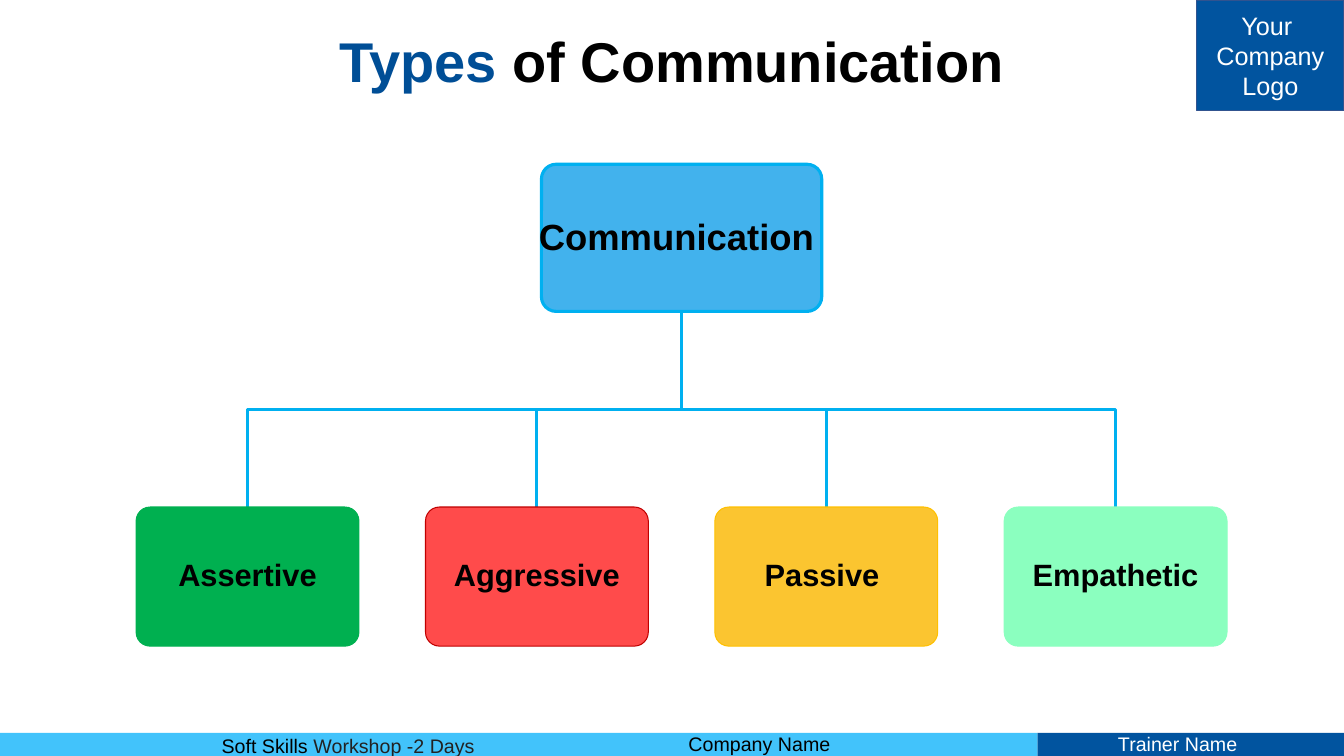
from pptx import Presentation
from pptx.dml.color import RGBColor
from pptx.enum.shapes import MSO_SHAPE
from pptx.enum.text import MSO_ANCHOR, PP_ALIGN
from pptx.util import Inches, Pt

BLACK, WHITE = "000000", "FFFFFF"
NAVY, LINE_BLUE = "01549F", "00B0F0"
TYPES = [
    ("Assertive", "00B050", "00B050"),
    ("Aggressive", "FF4B4B", "C00000"),
    ("Passive ", "FBC530", "FFC000"),
    ("Empathetic", "8BFFBF", "8BFFBF"),
]
PARENT_CENTER, PARENT_BOTTOM, BUS_TOP = 6.76, 3.1, 4.06
CHILD_TOP, CHILD_WIDTH, CHILD_HEIGHT, CHILD_PITCH = 5.03, 2.21, 1.38, 2.87
FIRST_CHILD_LEFT = 1.35


def color(hex_string):
    return RGBColor.from_string(hex_string)


def write_runs(paragraph, runs, size, bold=False):
    for text, text_color in runs:
        run = paragraph.add_run()
        run.text = text
        run.font.name = "Arial"
        run.font.size = Pt(size)
        run.font.bold = bold
        run.font.color.rgb = color(text_color)


def add_block(slide, kind, left, top, width, height, fill, line=None, line_width=1):
    shape = slide.shapes.add_shape(
        kind, Inches(left), Inches(top), Inches(width), Inches(height))
    shape.shadow.inherit = False
    shape.fill.solid()
    shape.fill.fore_color.rgb = color(fill)
    if line:
        shape.line.color.rgb = color(line)
        shape.line.width = Pt(line_width)
    else:
        shape.line.fill.background()
    return shape


def add_text(slide, left, top, width, height, runs, size, bold=False):
    box = slide.shapes.add_textbox(
        Inches(left), Inches(top), Inches(width), Inches(height))
    box.text_frame.word_wrap = True
    write_runs(box.text_frame.paragraphs[0], runs, size, bold)
    return box


def add_title(slide):
    runs = [("Types", "004E96"), (" of Communication", BLACK)]
    title = add_text(slide, 0.91, 0.27, 11.5, 0.73, runs, 40, bold=True)
    title.text_frame.vertical_anchor = MSO_ANCHOR.MIDDLE
    paragraph = title.text_frame.paragraphs[0]
    paragraph.alignment = PP_ALIGN.CENTER
    paragraph.line_spacing = 0.9


def add_corner_label(slide):
    label = add_block(slide, MSO_SHAPE.RECTANGLE, 11.87, 0, 1.46, 1.1, NAVY, "31538F")
    frame = label.text_frame
    frame.vertical_anchor = MSO_ANCHOR.MIDDLE
    for index, word in enumerate(["Your ", "Company", "Logo"]):
        paragraph = frame.add_paragraph() if index else frame.paragraphs[0]
        paragraph.alignment = PP_ALIGN.CENTER
        write_runs(paragraph, [(word, WHITE)], 18)


def add_footer(slide):
    add_block(slide, MSO_SHAPE.RECTANGLE, 10.29, 7.27, 3.04, 0.23, NAVY)
    add_block(slide, MSO_SHAPE.RECTANGLE, 0, 7.27, 10.29, 0.23, "42C3FB")
    add_text(slide, 6.73, 7.21, 2.46, 0.34, [("Company Name", BLACK)], 14)
    add_text(slide, 10.99, 7.21, 2.34, 0.34, [("Trainer Name", WHITE)], 14)
    workshop = [("Soft Skills ", BLACK), ("Workshop -2 Days", "222222")]
    add_text(slide, 2.1, 7.23, 3.59, 0.34, workshop, 14)


def add_node(slide, left, top, width, height, text, size, fill, line, line_width):
    node = add_block(slide, MSO_SHAPE.ROUNDED_RECTANGLE, left, top, width, height,
                     fill, line, line_width)
    node.adjustments[0] = 0.1
    frame = node.text_frame
    frame.word_wrap = False
    frame.vertical_anchor = MSO_ANCHOR.MIDDLE
    frame.margin_left = frame.margin_right = 0
    paragraph = frame.paragraphs[0]
    paragraph.alignment = PP_ALIGN.CENTER
    paragraph.line_spacing = 0.9
    write_runs(paragraph, [(text, BLACK)], size, bold=True)
    return node


def add_branch(slide, child_center):
    corners = [(PARENT_CENTER, BUS_TOP), (child_center, BUS_TOP),
               (child_center, CHILD_TOP)]
    builder = slide.shapes.build_freeform(
        Inches(PARENT_CENTER), Inches(PARENT_BOTTOM))
    builder.add_line_segments(
        [(Inches(x), Inches(y)) for x, y in corners], close=False)
    branch = builder.convert_to_shape()
    branch.shadow.inherit = False
    branch.fill.background()
    branch.line.color.rgb = color(LINE_BLUE)
    branch.line.width = Pt(2.25)


def add_tree(slide):
    parent = add_node(slide, 5.37, 1.63, 2.78, 1.46, "Communication", 26,
                      "42B2ED", LINE_BLUE, 2.25)
    parent.text_frame.margin_right = Inches(0.1)
    parent.text_frame.margin_top = Inches(0.07)
    for index, (name, fill, line) in enumerate(TYPES):
        left = FIRST_CHILD_LEFT + index * CHILD_PITCH
        add_branch(slide, left + CHILD_WIDTH / 2)
        add_node(slide, left, CHILD_TOP, CHILD_WIDTH, CHILD_HEIGHT,
                 name, 22, fill, line, 0.75)


def main():
    presentation = Presentation()
    presentation.slide_width = Inches(13.33)
    presentation.slide_height = Inches(7.5)
    slide = presentation.slides.add_slide(presentation.slide_layouts[6])
    add_corner_label(slide)
    add_footer(slide)
    add_title(slide)
    add_tree(slide)
    presentation.save("out.pptx")


if __name__ == "__main__":
    main()
